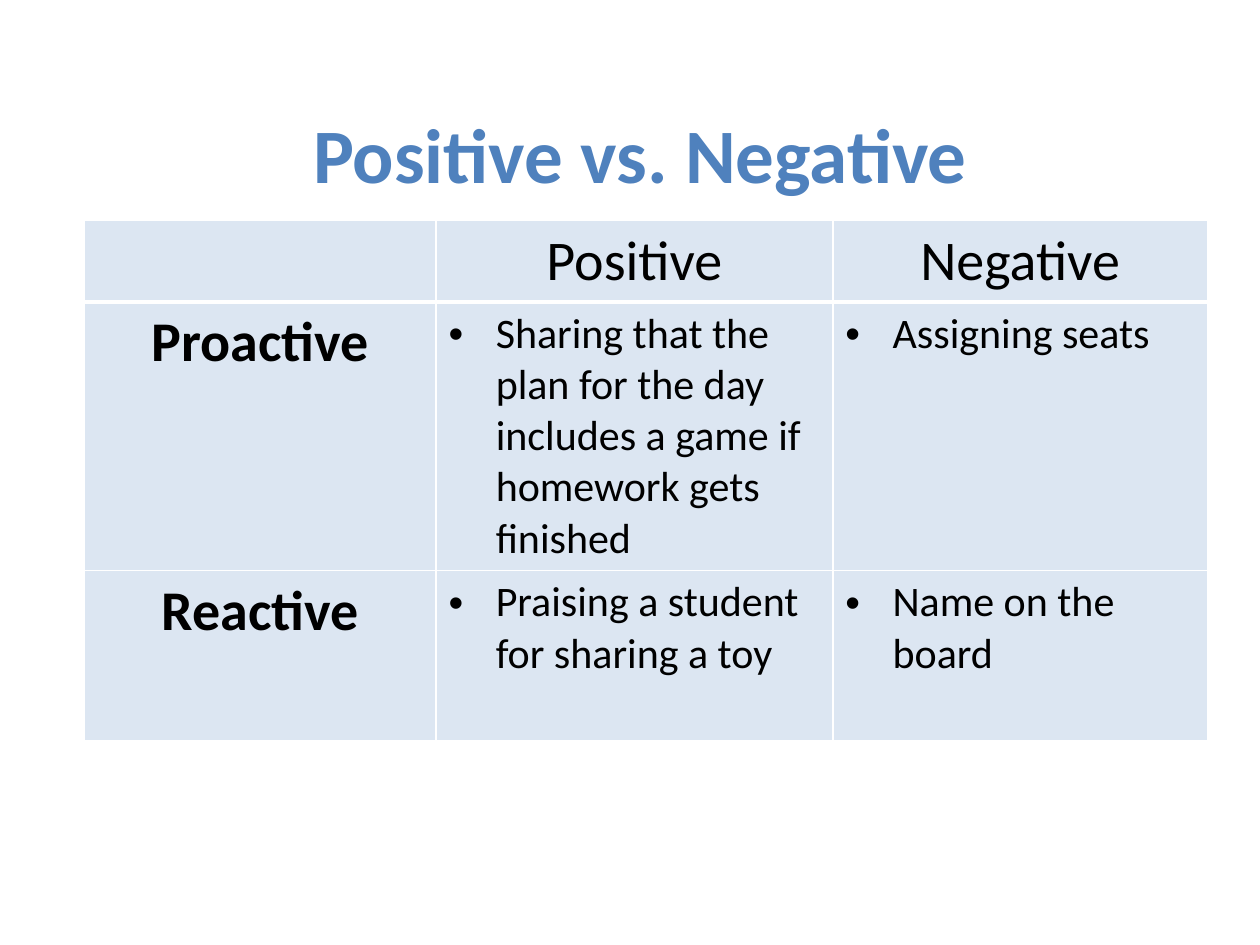
from lxml.etree import SubElement
from pptx import Presentation
from pptx.dml.color import RGBColor
from pptx.enum.text import MSO_ANCHOR, PP_ALIGN
from pptx.oxml.ns import qn
from pptx.util import Cm, Pt

BLUE = RGBColor(0x4F, 0x81, 0xBD)
PALE_BLUE = RGBColor(0xDC, 0xE6, 0xF2)
BLACK = RGBColor(0, 0, 0)
WHITE = RGBColor(0xFF, 0xFF, 0xFF)


def write_text(text_frame, text, size, color=BLACK, bold=False, bullet=False):
    text_frame.text = text
    paragraph = text_frame.paragraphs[0]
    paragraph.alignment = PP_ALIGN.LEFT if bullet else PP_ALIGN.CENTER
    if bullet:
        properties = paragraph._p.get_or_add_pPr()
        properties.set("marL", str(Cm(0.95)))
        properties.set("indent", str(-Cm(0.95)))
        SubElement(properties, qn("a:buFont"), typeface="Arial")
        SubElement(properties, qn("a:buChar"), char="•")
    for run in paragraph.runs:
        run.font.name = "Calibri"
        run.font.size = Pt(size)
        run.font.bold = bold
        run.font.color.rgb = color


def add_border(cell, side, width):
    properties = cell._tc.get_or_add_tcPr()
    line = SubElement(properties, qn(f"a:ln{side}"), w=str(Pt(width)))
    fill = SubElement(line, qn("a:solidFill"))
    SubElement(fill, qn("a:srgbClr"), val=str(WHITE))


presentation = Presentation()
presentation.slide_width = Cm(25.4)
presentation.slide_height = Cm(19.05)
slide = presentation.slides.add_slide(presentation.slide_layouts[5])

title = slide.shapes.title
title.left, title.top = Cm(1.48), Cm(1.48)
title.width, title.height = Cm(22.86), Cm(3.18)
title.text_frame.vertical_anchor = MSO_ANCHOR.MIDDLE
write_text(title.text_frame, "Positive vs. Negative", 44, color=BLUE, bold=True)

rows = [
    ["", "Positive", "Negative"],
    [
        "Proactive",
        "Sharing that the plan for the day includes a game if homework gets finished",
        "Assigning seats",
    ],
    ["Reactive", "Praising a student for sharing a toy", "Name on the board"],
]
column_widths = [Cm(7.09), Cm(8), Cm(7.55)]
row_heights = [Cm(1.63), Cm(4.9), Cm(3.43)]

table = slide.shapes.add_table(
    3, 3, Cm(1.7), Cm(4.45), sum(column_widths), sum(row_heights)
).table
for column, width in zip(table.columns, column_widths):
    column.width = width
for row, height in zip(table.rows, row_heights):
    row.height = height

for row_index, row_texts in enumerate(rows):
    for column_index, text in enumerate(row_texts):
        cell = table.cell(row_index, column_index)
        is_header = row_index == 0
        is_example = row_index > 0 and column_index > 0
        for side in "LRTB":
            add_border(cell, side, 3 if is_header and side == "B" else 1)
        cell.fill.solid()
        cell.fill.fore_color.rgb = PALE_BLUE
        if text:
            write_text(
                cell.text_frame,
                text,
                24 if is_example else 32,
                bold=not is_header and not is_example,
                bullet=is_example,
            )

presentation.save("out.pptx")
